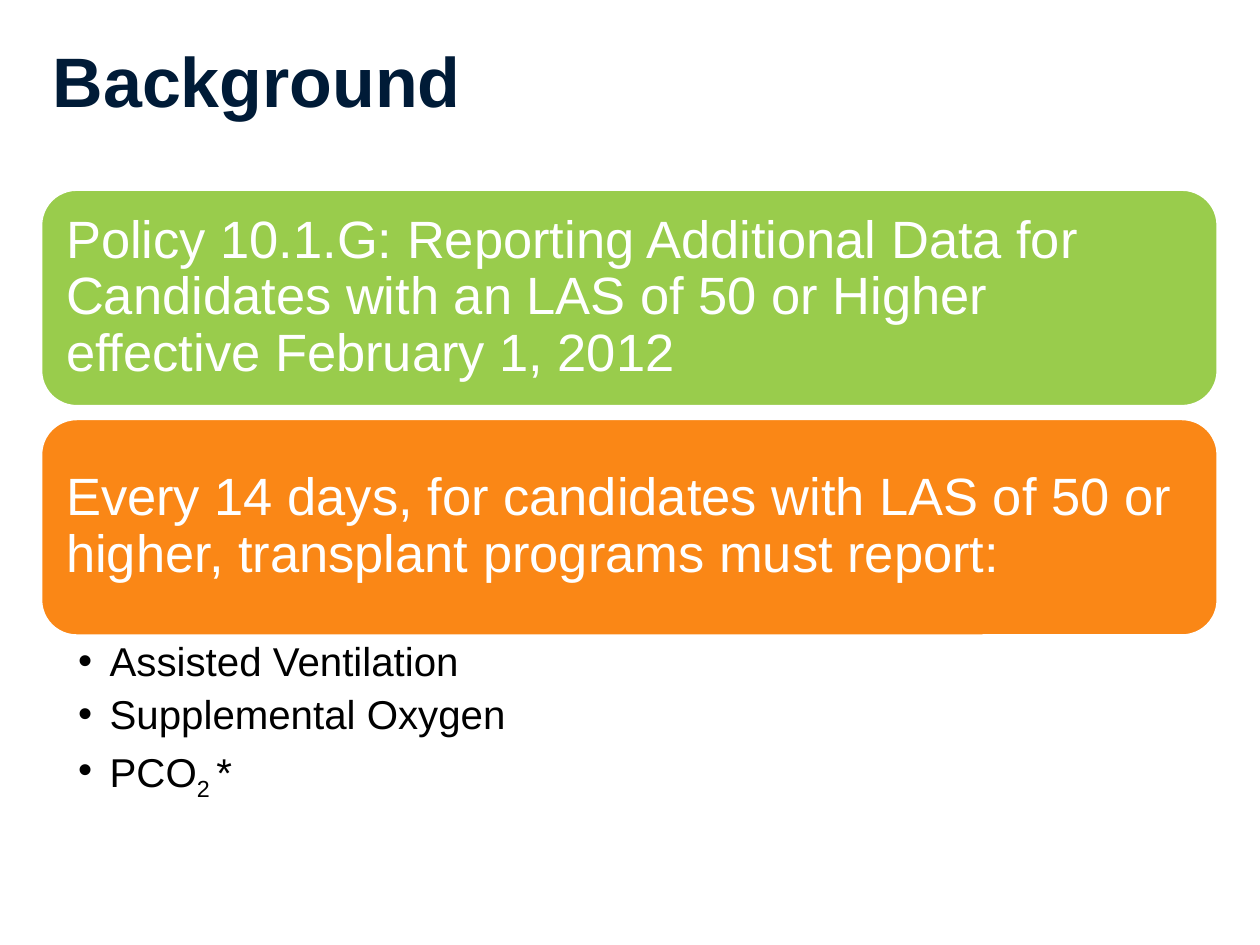
from lxml.etree import SubElement
from pptx import Presentation
from pptx.dml.color import RGBColor
from pptx.enum.shapes import MSO_SHAPE
from pptx.enum.text import MSO_ANCHOR, PP_ALIGN
from pptx.oxml.ns import qn
from pptx.util import Inches, Pt

COLORS = {
    "navy": "001B37",
    "green": "99CC4C",
    "orange": "FA8716",
    "white": "FFFFFF",
    "black": "000000",
}
LEFT, WIDTH = Inches(0.32), Inches(9.35)
TOP, PANEL_HEIGHT, ROW_PITCH = 1.5, 1.73, 1.82


def add_run(paragraph, text, size, color, bold=False):
    run = paragraph.add_run()
    run.text = text
    run.font.name = "Arial"
    run.font.size = Pt(size)
    run.font.bold = bold
    run.font.color.rgb = RGBColor.from_string(COLORS[color])
    return run


def set_frame(shape, anchor, left, top, right, bottom):
    frame = shape.text_frame
    frame.word_wrap = True
    frame.vertical_anchor = anchor
    frame.margin_left, frame.margin_top = Inches(left), Inches(top)
    frame.margin_right, frame.margin_bottom = Inches(right), Inches(bottom)
    return frame


presentation = Presentation()
presentation.slide_width, presentation.slide_height = Inches(10), Inches(7.5)
slide = presentation.slides.add_slide(presentation.slide_layouts[6])

# Title
title = slide.shapes.add_textbox(LEFT, Inches(0.17), Inches(9.56), Inches(0.93))
frame = set_frame(title, MSO_ANCHOR.MIDDLE, 0.1, 0.05, 0.1, 0.05)
add_run(frame.paragraphs[0], "Background", 40, "navy", bold=True)

# Policy panels
panels = [
    ("green", "Policy 10.1.G: Reporting Additional Data for Candidates with an LAS "
              "of 50 or Higher effective February 1, 2012"),
    ("orange", "Every 14 days, for candidates with LAS of 50 or higher, "
               "transplant programs must report:"),
]
for row, (color, text) in enumerate(panels):
    panel = slide.shapes.add_shape(
        MSO_SHAPE.ROUNDED_RECTANGLE, LEFT, Inches(TOP + row * ROW_PITCH),
        WIDTH, Inches(PANEL_HEIGHT))
    panel.shadow.inherit = False
    panel.fill.solid()
    panel.fill.fore_color.rgb = RGBColor.from_string(COLORS[color])
    panel.line.color.rgb = RGBColor.from_string(COLORS["white"])
    panel.line.width = Pt(2.25)
    paragraph = set_frame(panel, MSO_ANCHOR.MIDDLE, 0.12, 0.12, 0.12, 0.12).paragraphs[0]
    paragraph.alignment = PP_ALIGN.LEFT
    paragraph.line_spacing = 0.9
    add_run(paragraph, text, 30, "white")

# Reported items: each is a list of (text, baseline shift) runs
items = [
    [("Assisted Ventilation", 0)],
    [("Supplemental Oxygen", 0)],
    [("PCO", 0), ("2 ", -25000), ("*", 0)],
]
item_list = slide.shapes.add_textbox(
    LEFT, Inches(TOP + ROW_PITCH + PANEL_HEIGHT), WIDTH, Inches(1.22))
frame = set_frame(item_list, MSO_ANCHOR.TOP, 0.3, 0.04, 0.23, 0.04)
for index, runs in enumerate(items):
    paragraph = frame.add_paragraph() if index else frame.paragraphs[0]
    paragraph.line_spacing = 0.9
    paragraph.space_after = Pt(5.5)
    properties = paragraph._p.get_or_add_pPr()
    properties.set("marL", str(Inches(0.25)))
    properties.set("indent", str(Inches(-0.25)))
    SubElement(properties, qn("a:buFont")).set("typeface", "Arial")
    SubElement(properties, qn("a:buChar")).set("char", "•")
    for text, shift in runs:
        run = add_run(paragraph, text, 23, "black")
        if shift:
            run._r.get_or_add_rPr().set("baseline", str(shift))

presentation.save("out.pptx")
